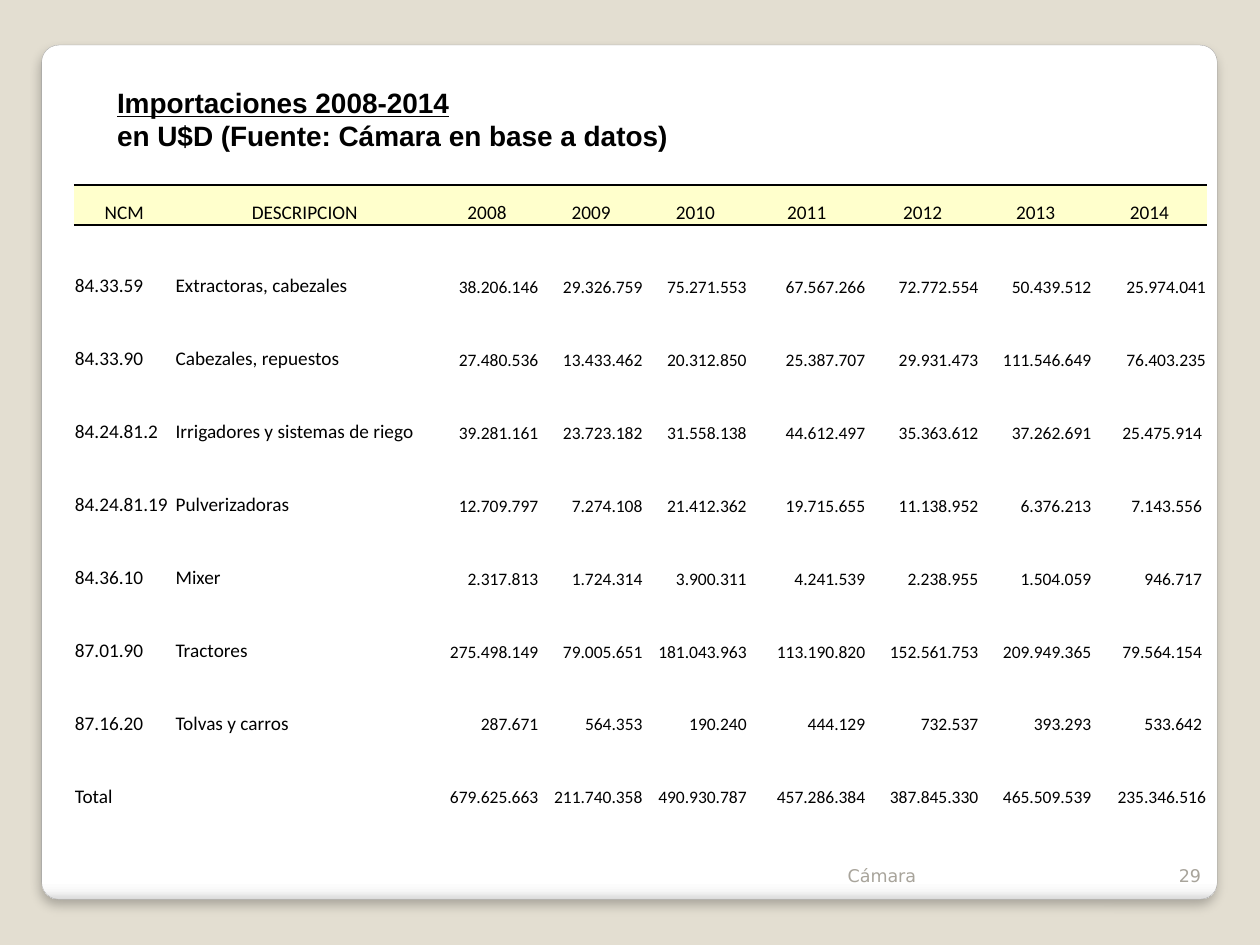
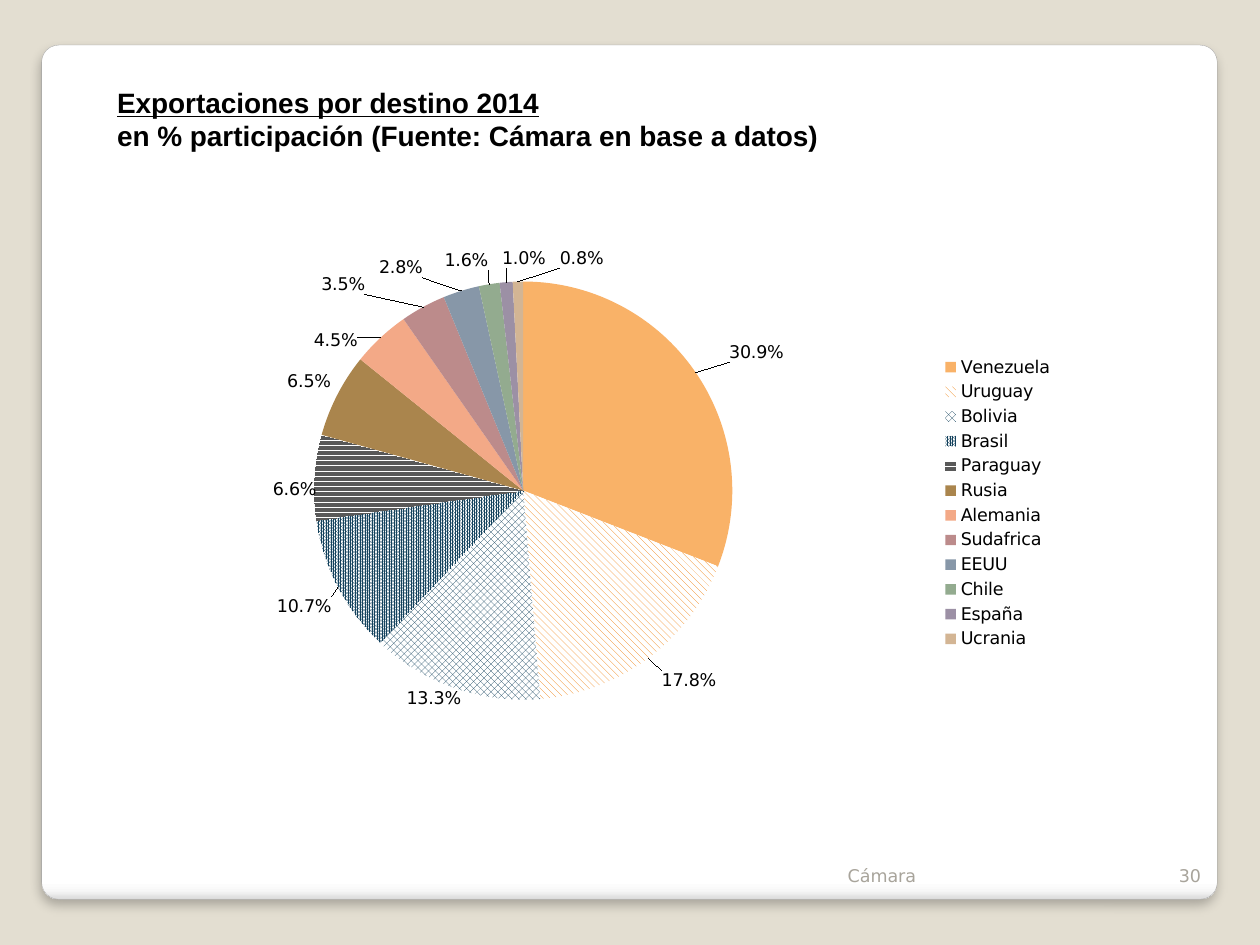
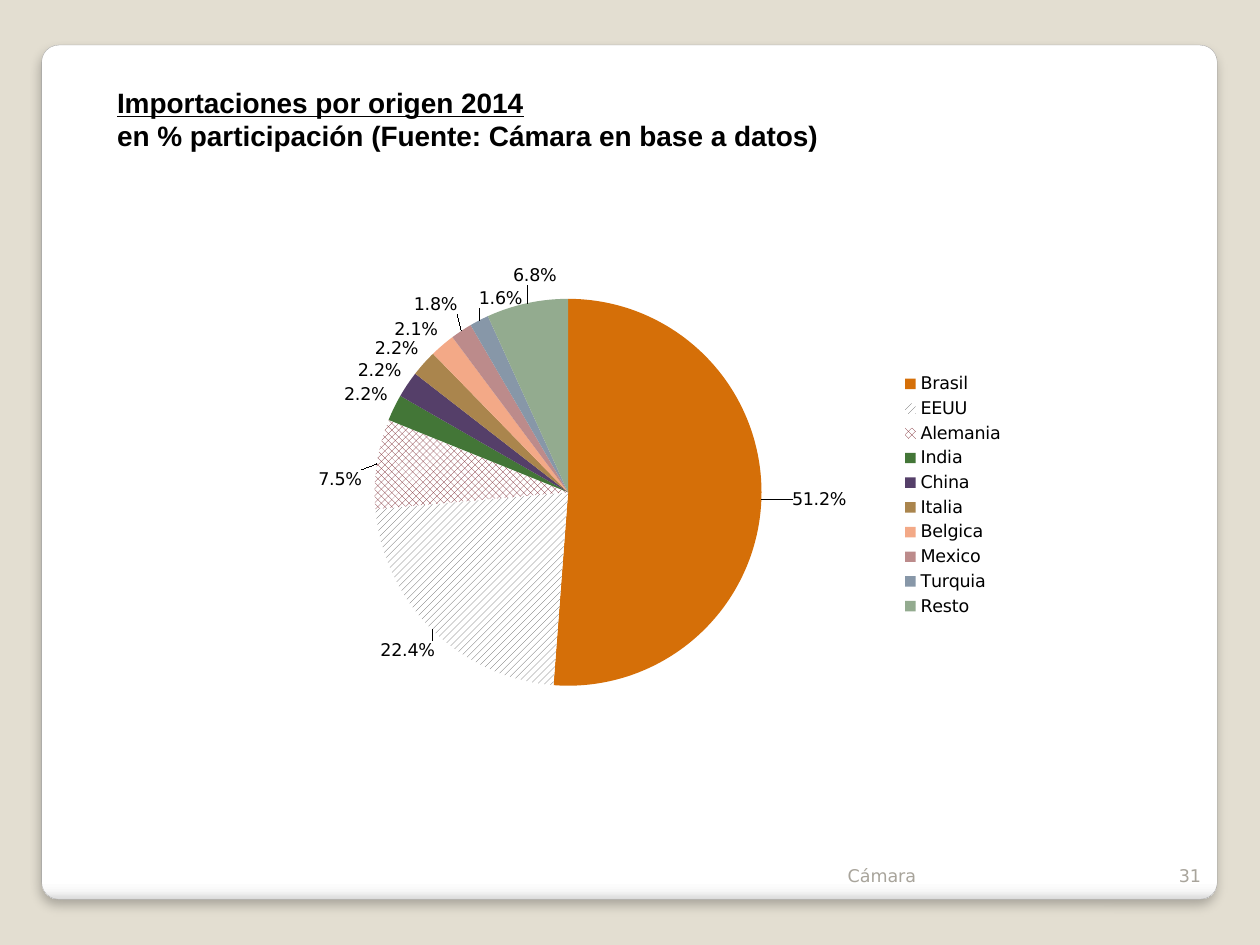
from lxml.etree import SubElement
from pptx import Presentation
from pptx.chart.data import CategoryChartData
from pptx.dml.color import RGBColor
from pptx.enum.chart import XL_CHART_TYPE, XL_LABEL_POSITION, XL_LEGEND_POSITION
from pptx.enum.dml import MSO_PATTERN
from pptx.enum.shapes import MSO_SHAPE
from pptx.enum.text import MSO_ANCHOR, PP_ALIGN
from pptx.oxml.ns import qn
from pptx.util import Cm, Pt

BEIGE = RGBColor(0xE3, 0xDE, 0xD1)
WHITE = RGBColor(0xFF, 0xFF, 0xFF)
BLACK = RGBColor(0x00, 0x00, 0x00)
CARD_LINE = RGBColor(0xA4, 0xA4, 0xA4)
FOOTER_GREY = RGBColor(0xA8, 0xA4, 0x9B)
HEADER_YELLOW = RGBColor(0xFF, 0xFF, 0xCC)
LIGHT_ORANGE = RGBColor(0xF9, 0xB2, 0x68)
ORANGE = RGBColor(0xF0, 0x7F, 0x09)
DARK_ORANGE = RGBColor(0xD5, 0x6F, 0x08)
NAVY = RGBColor(0x14, 0x42, 0x5D)
DARK_GREY = RGBColor(0x59, 0x59, 0x59)
DARK_RED = RGBColor(0x77, 0x1F, 0x28)
GREEN = RGBColor(0x43, 0x76, 0x37)
PURPLE = RGBColor(0x55, 0x3F, 0x69)
BROWN = RGBColor(0xAA, 0x85, 0x4D)
SALMON = RGBColor(0xF3, 0xA9, 0x87)
ROSE = RGBColor(0xBC, 0x8B, 0x8B)
STEEL = RGBColor(0x87, 0x97, 0xA8)
SAGE = RGBColor(0x93, 0xAB, 0x8F)
LILAC = RGBColor(0x9C, 0x90, 0xA5)
SAND = RGBColor(0xD3, 0xB5, 0x94)

CARD_STOPS = [(0, "FFFFFF"), (98, "FFFFFF"), (99, "F7F7F7"), (100, "DADADA")]
NO_STYLE_NO_GRID = "{2D5ABB26-0587-4C30-8999-92F81FD0307C}"
FIRST_PAGE = 29

TITLES = [
    ("Importaciones 2008-2014", "en U$D (Fuente: Cámara en base a datos)"),
    ("Exportaciones por destino 2014", "en % participación (Fuente: Cámara en base a datos)"),
    ("Importaciones por origen 2014", "en % participación (Fuente: Cámara en base a datos)"),
]

COLUMN_WIDTHS = [2.03, 5.25, 2.1, 2.1, 2.1, 2.39, 2.28, 2.28, 2.31]
HEADERS = ["NCM", "DESCRIPCION", "2008", "2009", "2010", "2011", "2012", "2013", "2014"]
IMPORTS = [
    ["84.33.59", "Extractoras, cabezales", "38.206.146", "29.326.759", "75.271.553",
     "67.567.266", "72.772.554", "50.439.512", "25.974.041"],
    ["84.33.90", "Cabezales, repuestos", "27.480.536", "13.433.462", "20.312.850",
     "25.387.707", "29.931.473", "111.546.649", "76.403.235"],
    ["84.24.81.2", "Irrigadores y sistemas de riego", "39.281.161", "23.723.182", "31.558.138",
     "44.612.497", "35.363.612", "37.262.691", "25.475.914 "],
    ["84.24.81.19", "Pulverizadoras", "12.709.797", "7.274.108", "21.412.362",
     "19.715.655", "11.138.952", "6.376.213", "7.143.556 "],
    ["84.36.10", "Mixer", "2.317.813", "1.724.314", "3.900.311",
     "4.241.539", "2.238.955", "1.504.059", "946.717 "],
    ["87.01.90", "Tractores", "275.498.149", "79.005.651", "181.043.963",
     "113.190.820", "152.561.753", "209.949.365", "79.564.154 "],
    ["87.16.20", "Tolvas y carros", "287.671", "564.353", "190.240",
     "444.129", "732.537", "393.293", "533.642 "],
    ["Total", "", "679.625.663", "211.740.358", "490.930.787",
     "457.286.384", "387.845.330", "465.509.539", "235.346.516"],
]

# Slices: name, share, colour, pattern, label shift as a fraction of the chart
EXPORT_SLICES = [
    ("Venezuela", 0.309, LIGHT_ORANGE, None, (0.03, -0.01)),
    ("Uruguay", 0.178, ORANGE, MSO_PATTERN.WIDE_DOWNWARD_DIAGONAL, (0.01, 0.01)),
    ("Bolivia", 0.133, NAVY, MSO_PATTERN.LARGE_CHECKER_BOARD, (0.01, -0.01)),
    ("Brasil", 0.107, NAVY, MSO_PATTERN.PERCENT_90, (0, 0.01)),
    ("Paraguay", 0.066, DARK_GREY, MSO_PATTERN.DARK_HORIZONTAL, (0.01, 0.02)),
    ("Rusia", 0.065, BROWN, None, None),
    ("Alemania", 0.045, SALMON, None, (-0.02, 0.03)),
    ("Sudafrica", 0.035, ROSE, None, (-0.06, -0.01)),
    ("EEUU", 0.028, STEEL, None, (-0.04, -0.01)),
    ("Chile", 0.016, SAGE, None, (0, -0.01)),
    ("España", 0.01, LILAC, None, (0.02, -0.01)),
    ("Ucrania", 0.008, SAND, None, (0.07, -0.01)),
]
IMPORT_SLICES = [
    ("Brasil", 0.512, DARK_ORANGE, None, (0.03, 0)),
    ("EEUU", 0.224, DARK_GREY, MSO_PATTERN.WIDE_UPWARD_DIAGONAL, (0.01, 0.01)),
    ("Alemania", 0.075, DARK_RED, MSO_PATTERN.LARGE_CHECKER_BOARD, (-0.01, 0.05)),
    ("India", 0.022, GREEN, None, None),
    ("China", 0.022, PURPLE, None, None),
    ("Italia", 0.022, BROWN, None, None),
    ("Belgica", 0.021, SALMON, None, None),
    ("Mexico", 0.018, ROSE, None, (0, -0.02)),
    ("Turquia", 0.016, STEEL, None, (0.06, -0.01)),
    ("Resto", 0.068, SAGE, None, (0.04, -0.02)),
]


def write_text(paragraph, text, size=10, font="DejaVu Sans", color=BLACK,
               bold=False, underline=False, align=PP_ALIGN.LEFT):
    paragraph.alignment = align
    if not text:
        SubElement(paragraph._p, qn("a:endParaRPr"), sz=str(size * 100))
        return
    run = paragraph.add_run()
    run.text = text
    run.font.size = Pt(size)
    run.font.name = font
    run.font.color.rgb = color
    run.font.bold = bold
    run.font.underline = underline


def set_manual_layout(parent, index, **settings):
    """Place a chart part by fractions of the chart; settings follow schema order."""
    for old_layout in parent.findall(qn("c:layout")):
        parent.remove(old_layout)
    layout = SubElement(parent, qn("c:layout"))
    parent.insert(index, layout)
    manual = SubElement(layout, qn("c:manualLayout"))
    for name, value in settings.items():
        SubElement(manual, qn(f"c:{name}"), val=str(value))


presentation = Presentation()
presentation.slide_width = Cm(25.4)
presentation.slide_height = Cm(19.05)
background = presentation.slide_master.background.fill
background.solid()
background.fore_color.rgb = BEIGE

# Card, footer and title of every slide
slides = []
for page, (heading, subheading) in enumerate(TITLES, FIRST_PAGE):
    slide = presentation.slides.add_slide(presentation.slide_layouts[6])
    slides.append(slide)

    card = slide.shapes.add_shape(
        MSO_SHAPE.ROUNDED_RECTANGLE, Cm(0.84), Cm(0.91), Cm(23.7), Cm(17.22))
    card.adjustments[0] = 0.02
    card.fill.gradient()
    card.fill.gradient_angle = 270
    stop_list = card._element.spPr.find(qn("a:gradFill")).find(qn("a:gsLst"))
    for stop in list(stop_list):
        stop_list.remove(stop)
    for position, color in CARD_STOPS:
        stop = SubElement(stop_list, qn("a:gs"), pos=str(position * 1000))
        SubElement(stop, qn("a:srgbClr"), val=color)
    card.line.color.rgb = CARD_LINE
    card.line.width = Pt(0.16)
    card.shadow.inherit = False
    shadow = SubElement(card._element.spPr.find(qn("a:effectLst")), qn("a:outerShdw"),
                        blurRad=str(Pt(6)), dist=str(Pt(4)), dir="5400000", rotWithShape="0")
    shadow_color = SubElement(shadow, qn("a:srgbClr"), val="000000")
    SubElement(shadow_color, qn("a:alpha"), val="25000")

    for left, width, text, align in [(16.84, 6.35, "Cámara", PP_ALIGN.LEFT),
                                     (23.19, 1.27, str(page), PP_ALIGN.RIGHT)]:
        footer = slide.shapes.add_textbox(Cm(left), Cm(16.97), Cm(width), Cm(1.02)).text_frame
        footer.word_wrap = True
        footer.vertical_anchor = MSO_ANCHOR.BOTTOM
        write_text(footer.paragraphs[0], text, color=FOOTER_GREY, align=align)

    title = slide.shapes.add_textbox(Cm(2.11), Cm(1.27), Cm(21.59), Cm(2.26)).text_frame
    title.word_wrap = True
    title.vertical_anchor = MSO_ANCHOR.MIDDLE
    title_paragraph = title.paragraphs[0]
    write_text(title_paragraph, heading, size=16, font="Arial", bold=True, underline=True)
    title_paragraph.add_line_break()
    write_text(title_paragraph, subheading, size=16, font="Arial", bold=True)

# Import table: a blank row stands before each data row
rows = [HEADERS]
for record in IMPORTS:
    rows += [[""] * len(HEADERS), record]
table = slides[0].shapes.add_table(
    len(rows), len(HEADERS), Cm(1.49), Cm(3.73), Cm(22.84), Cm(12.57)).table
table.first_row = False
table.horz_banding = False
table._tbl.tblPr.find(qn("a:tableStyleId")).text = NO_STYLE_NO_GRID
for column, width in zip(table.columns, COLUMN_WIDTHS):
    column.width = Cm(width)
for row_index, values in enumerate(rows):
    is_header = row_index == 0
    table.rows[row_index].height = Cm(0.81 if is_header else 0.73 if row_index % 2 else 0.74)
    for column_index, text in enumerate(values):
        is_number = column_index > 1 and not is_header
        cell = table.cell(row_index, column_index)
        cell.margin_left = cell.margin_right = cell.margin_top = Cm(0.02)
        cell.margin_bottom = 0
        cell.vertical_anchor = MSO_ANCHOR.BOTTOM
        align = PP_ALIGN.CENTER if is_header else PP_ALIGN.RIGHT if is_number else PP_ALIGN.LEFT
        write_text(cell.text_frame.paragraphs[0], text, size=10 if is_number else 11,
                   font="Calibri", align=align)
        if not is_header:
            cell.fill.background()
            continue
        for side in ("lnT", "lnB"):
            border = SubElement(cell._tc.tcPr, qn(f"a:{side}"), w=str(Pt(1)))
            border_fill = SubElement(border, qn("a:solidFill"))
            SubElement(border_fill, qn("a:srgbClr"), val=str(BLACK))
        cell.fill.solid()
        cell.fill.fore_color.rgb = HEADER_YELLOW

# Pie charts: slide, slices, frame in cm, plot area as fractions of the chart
PIES = [
    (slides[1], EXPORT_SLICES, (3.1, 3.94, 18.39, 12.4), (0.16, 0.14, 0.49, 0.68)),
    (slides[2], IMPORT_SLICES, (4.9, 4.62, 15.6, 10.72), (0.17, 0.13, 0.5, 0.73)),
]
for slide, slices, frame, (x, y, w, h) in PIES:
    chart_data = CategoryChartData(number_format="0.0%")
    chart_data.categories = [name for name, *_ in slices]
    chart_data.add_series("Series 1", [share for _, share, *_ in slices])
    chart = slide.shapes.add_chart(
        XL_CHART_TYPE.PIE, *[Cm(length) for length in frame], chart_data).chart
    chart.has_title = False
    chart.font.size = Pt(10)
    chart.font.name = "DejaVu Sans"
    chart.font.color.rgb = BLACK
    chart.has_legend = True
    chart.legend.position = XL_LEGEND_POSITION.RIGHT
    chart.legend.include_in_layout = False
    plot = chart.plots[0]
    plot.vary_by_categories = True
    set_manual_layout(chart._chartSpace.chart.plotArea, 0, layoutTarget="inner",
                      xMode="edge", yMode="edge", x=x, y=y, w=w, h=h)

    series = plot.series[0]
    labels = series.data_labels
    labels.show_value = True
    labels.number_format = "0.0%"
    labels.number_format_is_linked = False
    labels.position = XL_LABEL_POSITION.OUTSIDE_END
    for index, (_, _, color, pattern, shift) in enumerate(slices):
        point = series.points[index]
        fill = point.format.fill
        if pattern is None:
            fill.solid()
        else:
            fill.patterned()
            fill.pattern = pattern
            fill.back_color.rgb = WHITE
        fill.fore_color.rgb = color
        if shift:
            point.data_label.position = XL_LABEL_POSITION.OUTSIDE_END
            label = series._element.findall(".//" + qn("c:dLbl"))[-1]
            set_manual_layout(label, 1, x=shift[0], y=shift[1])

presentation.save("out.pptx")
